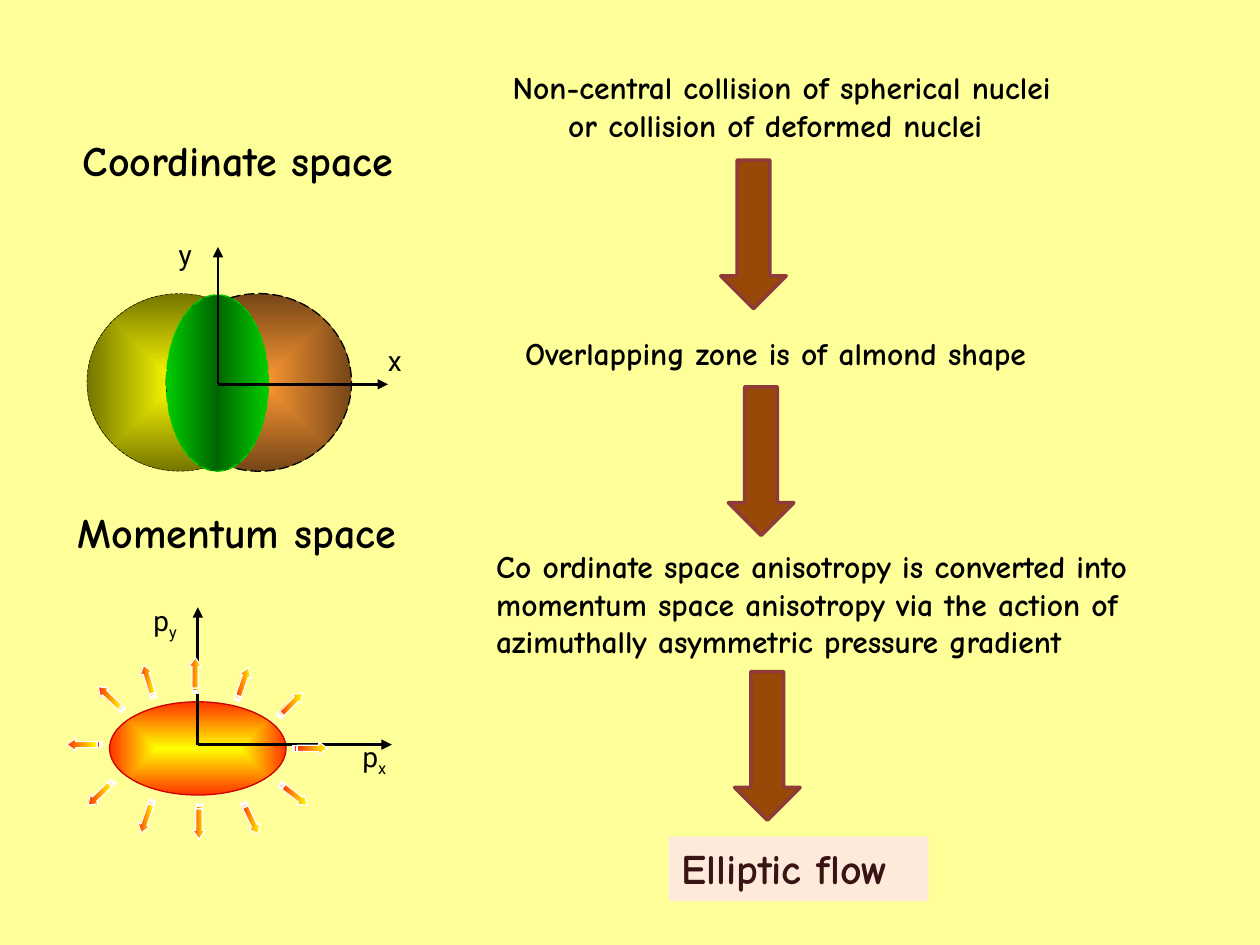
from math import hypot

from lxml import etree
from pptx import Presentation
from pptx.dml.color import RGBColor
from pptx.enum.dml import MSO_LINE
from pptx.enum.shapes import MSO_CONNECTOR, MSO_SHAPE
from pptx.enum.text import MSO_ANCHOR, MSO_AUTO_SIZE
from pptx.oxml import parse_xml
from pptx.oxml.ns import nsdecls, qn
from pptx.util import Inches, Pt

OVAL = MSO_SHAPE.OVAL
RECTANGLE = MSO_SHAPE.RECTANGLE
DOWN_ARROW = MSO_SHAPE.DOWN_ARROW
STRAIGHT = MSO_CONNECTOR.STRAIGHT
LONG_DASH = MSO_LINE.LONG_DASH

COLORS = {
    "background": "FFFF99", "black": "000000", "white": "FFFFFF",
    "yellow": "FFFF00", "olive": "757500",
    "orange": "FF9933", "brown": "754617",
    "green": "00CC00", "dark green": "006600",
    "red": "FF3300", "dark red": "CC0000",
    "arrow": "984807", "arrow edge": "8E3B39",
    "result": "FDEADA", "result text": "381514",
}
HEADING_FONT = "Comic Neue"
LABEL_FONT = "Roboto"

# Striped arrow along its axis: (distance from start, offset to the side)
ARROW_LENGTH = 0.28
ARROW_PARTS = [
    [(0.04, -0.025), (0.21, -0.025), (0.21, -0.05), (0.28, 0),
     (0.21, 0.05), (0.21, 0.025), (0.04, 0.025)],
    [(0, -0.025), (0.01, -0.025), (0.01, 0.025), (0, 0.025)],
    [(0.02, -0.025), (0.035, -0.025), (0.035, 0.025), (0.02, 0.025)],
]
# Start and tip of each burst arrow, from the corner of the momentum region
BURST = [
    ((0.38, 2.23), (0.18, 2.42)), ((1.70, 2.25), (1.92, 2.42)),
    ((0.46, 1.67), (0.26, 1.48)), ((0.70, 1.57), (0.62, 1.31)),
    ((1.69, 1.72), (1.88, 1.53)), ((1.06, 2.41), (1.06, 2.69)),
    ((1.80, 1.97), (2.08, 1.97)), ((1.41, 2.40), (1.53, 2.65)),
    ((1.36, 1.59), (1.45, 1.33)), ((0.29, 1.94), (0.01, 1.94)),
    ((1.03, 1.53), (1.03, 1.25)), ((0.69, 2.38), (0.60, 2.64)),
]


def rgb(name):
    return RGBColor.from_string(COLORS[name])


def set_gradient(shape, stops, angle=None):
    """Linear gradient at an angle, or from the centre outwards."""
    stop_xml = "".join(
        f'<a:gs pos="{position * 1000}"><a:srgbClr val="{COLORS[name]}"/></a:gs>'
        for position, name in stops)
    if angle is None:
        direction = ('<a:path path="shape"><a:fillToRect l="50000" t="50000" '
                     'r="50000" b="50000"/></a:path>')
    else:
        direction = f'<a:lin ang="{angle * 60000}" scaled="1"/>'
    shape.fill.background()
    properties = shape._element.spPr
    properties.replace(properties.find(qn("a:noFill")), parse_xml(
        f'<a:gradFill {nsdecls("a")} rotWithShape="1">'
        f'<a:gsLst>{stop_xml}</a:gsLst>{direction}</a:gradFill>'))


def set_line(shape, color, width, dash=None):
    shape.shadow.inherit = False
    shape.line.color.rgb = rgb(color)
    shape.line.width = Pt(width)
    if dash is not None:
        shape.line.dash_style = dash


def add_block(group, kind, left, top, width, height):
    return group.shapes.add_shape(kind, Inches(left), Inches(top),
                                  Inches(width), Inches(height))


def add_text(group, lines, left, top, width, height, size=18, bold=True,
             font=HEADING_FONT, color="black", wrap=True, subscript=None,
             indents=(), before=None, fill=None):
    box = group.shapes.add_textbox(Inches(left), Inches(top),
                                   Inches(width), Inches(height))
    if fill:
        box.fill.solid()
        box.fill.fore_color.rgb = rgb(fill)
    frame = box.text_frame
    frame.word_wrap = wrap
    frame.auto_size = MSO_AUTO_SIZE.SHAPE_TO_FIT_TEXT
    frame.vertical_anchor = MSO_ANCHOR.TOP
    frame.text = "\n".join(lines)
    if subscript:
        run = frame.paragraphs[-1].add_run()
        run.text = subscript
        run.font._element.set("baseline", "-25000")
    for paragraph in frame.paragraphs:
        if before is not None:
            paragraph.space_before = Pt(before)
        for run in paragraph.runs:
            run.font.size = Pt(size)
            run.font.bold = bold
            run.font.name = font
            run.font.color.rgb = rgb(color)
    for paragraph, indent in zip(frame.paragraphs, indents):
        paragraph._p.get_or_add_pPr().set("marL", str(Inches(indent)))
    return box


def add_heading(group, text, left, top, width):
    add_text(group, [text], left, top, width, 0.51, size=24, before=11.2)


def add_label(group, text, left, top, width, height=0.37, **text_format):
    return add_text(group, [text], left, top, width, height, size=16,
                    bold=False, font=LABEL_FONT, wrap=False, **text_format)


def add_axis(group, start, end):
    axis = group.shapes.add_connector(
        STRAIGHT, *(Inches(value) for value in (*start, *end)))
    axis.line.color.rgb = rgb("black")
    axis.line.width = Pt(1.5)
    etree.SubElement(axis.line._get_or_add_ln(), qn("a:tailEnd"), type="triangle")
    etree.SubElement(axis._element.spPr, qn("a:effectLst"))


def add_burst_arrow(group, start, tip):
    dx, dy = tip[0] - start[0], tip[1] - start[1]
    length = hypot(dx, dy)
    ux, uy = dx / length, dy / length
    stretch = length / ARROW_LENGTH
    for part in ARROW_PARTS:
        points = [(Inches(start[0] + along * stretch * ux - side * uy),
                   Inches(start[1] + along * stretch * uy + side * ux))
                  for along, side in part]
        builder = group.shapes.build_freeform(*points[0])
        builder.add_line_segments(points[1:], close=True)
        shape = builder.convert_to_shape()
        set_gradient(shape, [(0, "yellow"), (100, "red")], angle=180)
        set_line(shape, "white", 0.75)


def coordinate_space(slide, left, top):
    group = slide.shapes.add_group_shape()
    # Two nuclei and their overlap
    nuclei = [(0.13, "yellow", "olive", 0.25), (0.76, "orange", "brown", 0.75)]
    for offset, inner, outer, line_width in nuclei:
        nucleus = add_block(group, OVAL, left + offset, top + 1.31, 1.47, 1.41)
        set_gradient(nucleus, [(0, inner), (100, outer)])
        set_line(nucleus, "black", line_width, LONG_DASH)
    overlap = add_block(group, OVAL, left + 0.76, top + 1.32, 0.81, 1.4)
    set_gradient(overlap, [(0, "green"), (50, "dark green"), (100, "green")], angle=180)
    set_line(overlap, "green", 0.75, LONG_DASH)
    # Axes and labels
    origin = (left + 1.17, top + 2.03)
    add_axis(group, origin, (left + 2.52, top + 2.03))
    add_axis(group, origin, (left + 1.17, top + 0.94))
    add_label(group, "y", left + 0.76, top + 0.82, 0.31)
    add_label(group, "x", left + 2.42, top + 1.66, 0.31)
    add_heading(group, "Coordinate space", left, top, 3.11)


def momentum_space(slide, left, top):
    group = slide.shapes.add_group_shape()
    # Expanding source
    source = add_block(group, OVAL, left + 0.68, top + 1.27, 0.74, 1.4)
    source.rotation = 270
    set_gradient(source, [(0, "yellow"), (100, "red")])
    set_line(source, "dark red", 0.75)
    # Axes and labels
    origin = (left + 1.05, top + 1.94)
    add_axis(group, origin, (left + 1.05, top + 0.85))
    add_axis(group, origin, (left + 2.59, top + 1.94))
    add_label(group, "p", left + 0.6, top + 0.77, 0.4, subscript="y")
    add_label(group, "p", left + 2.26, top + 1.85, 0.6, 0.4, subscript="x").rotation = 1
    # Burst of arrows
    for start, tip in BURST:
        add_burst_arrow(group, (left + start[0], top + start[1]),
                        (left + tip[0], top + tip[1]))
    add_heading(group, "Momentum space", left, top, 3.19)


def flow_steps(slide, left, top):
    group = slide.shapes.add_group_shape()
    add_text(group, ["Non-central collision of spherical nuclei",
                     "or collision of deformed nuclei"],
             left + 0.13, top, 4.91, 0.71, indents=(0, 0.44))
    add_text(group, ["Overlapping zone is of almond shape"],
             left + 0.23, top + 2.11, 4.51, 0.4)
    add_text(group, ["Co ordinate space anisotropy is converted into",
                     "momentum space anisotropy via the action of",
                     "azimuthally asymmetric pressure gradient"],
             left, top + 3.8, 5.84, 1.01)
    add_text(group, ["Elliptic flow"], left + 1.47, top + 6.15, 2.06, 0.51,
             size=24, color="result text", fill="result")
    # Arrows between the steps
    for x, y in [(1.88, 0.78), (1.94, 2.58), (1.99, 4.84)]:
        arrow = add_block(group, DOWN_ARROW, left + x, top + y, 0.52, 1.18)
        arrow.fill.solid()
        arrow.fill.fore_color.rgb = rgb("arrow")
        set_line(arrow, "arrow edge", 2)


def main():
    presentation = Presentation()
    presentation.slide_width = Inches(10)
    presentation.slide_height = Inches(7.5)
    slide = presentation.slides.add_slide(presentation.slide_layouts[6])
    slide.background.fill.solid()
    slide.background.fill.fore_color.rgb = rgb("background")
    coordinate_space(slide, 0.56, 1.02)
    momentum_space(slide, 0.52, 3.97)
    flow_steps(slide, 3.84, 0.49)
    presentation.save("out.pptx")


if __name__ == "__main__":
    main()
